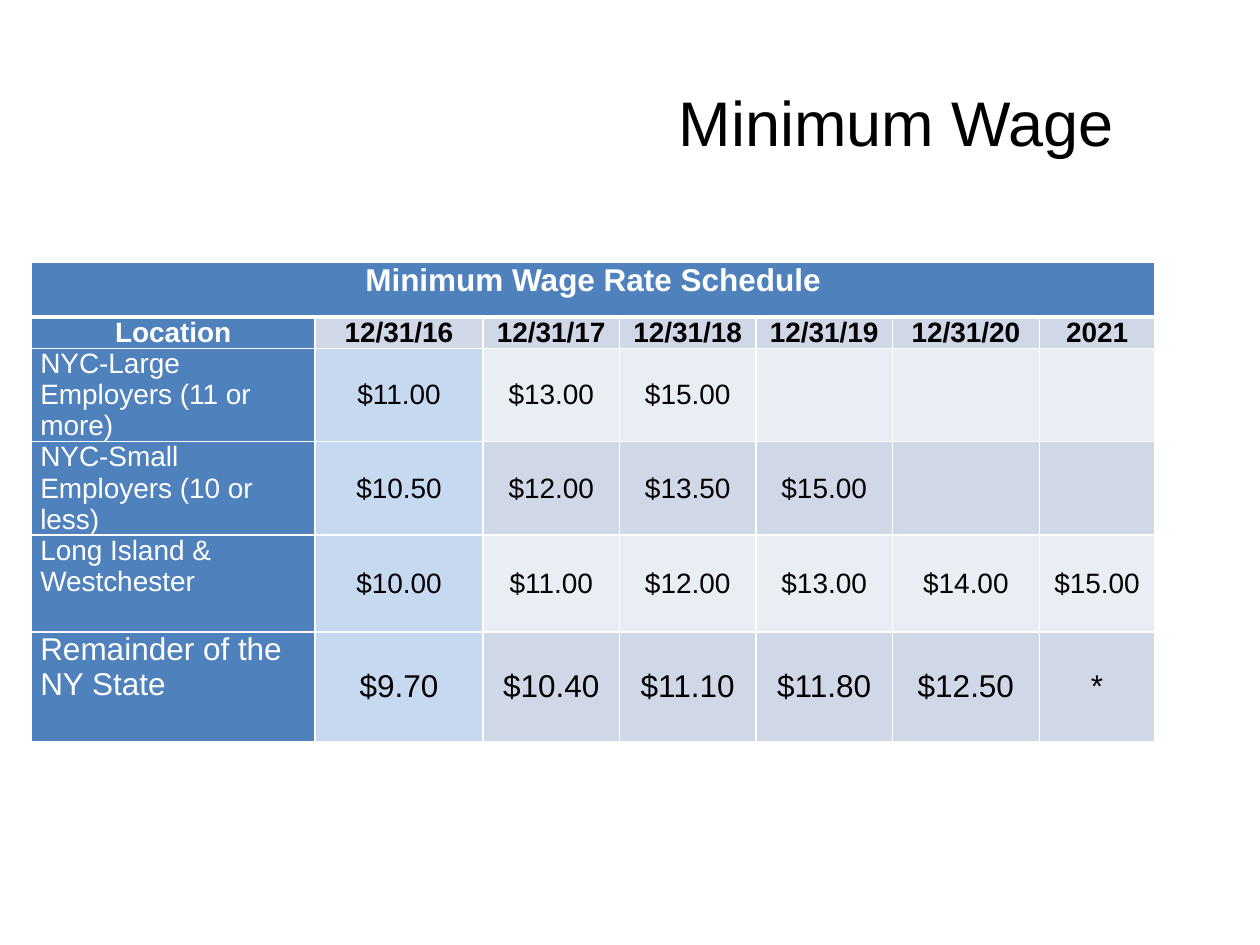
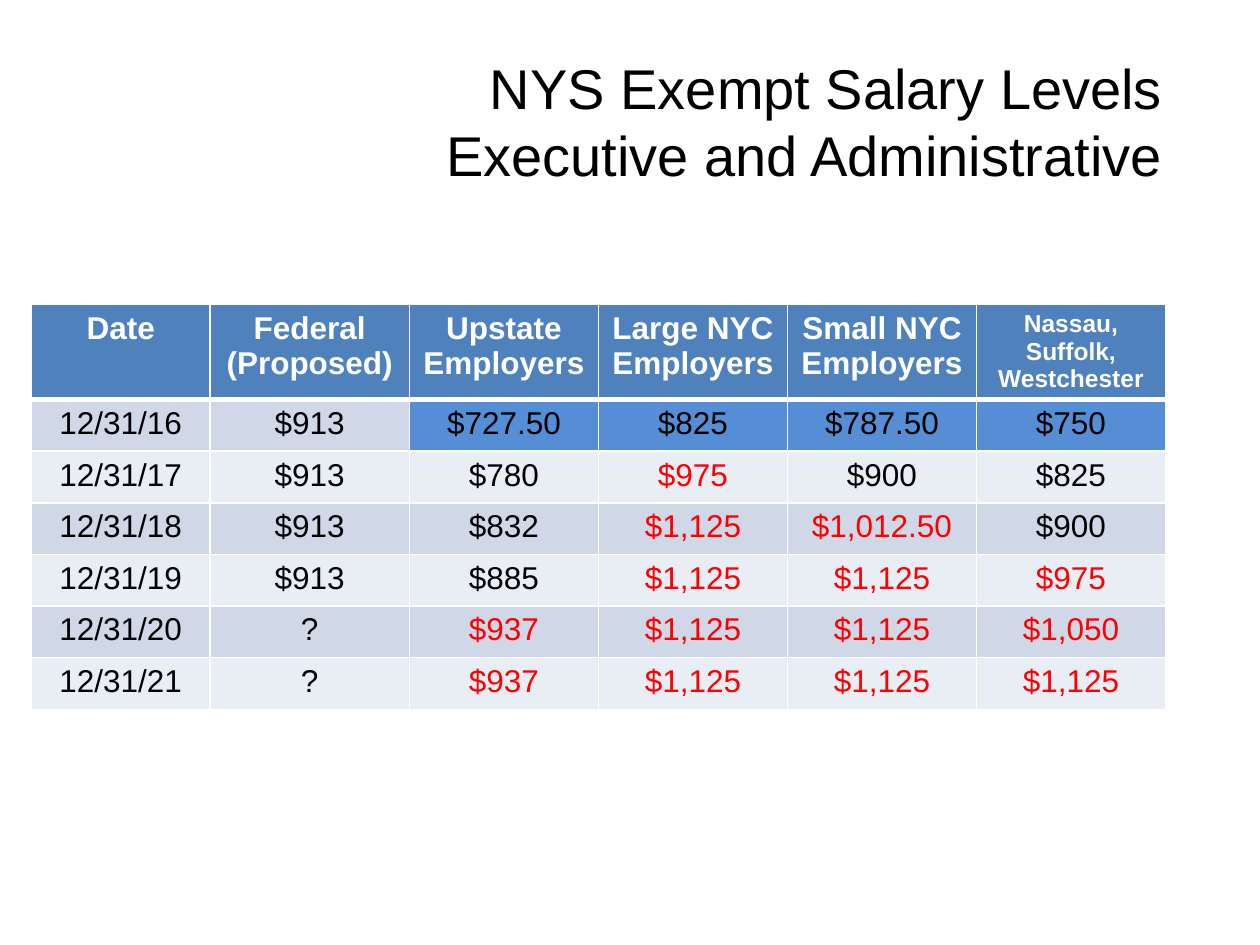
from lxml import etree
from pptx import Presentation
from pptx.dml.color import RGBColor
from pptx.enum.text import MSO_ANCHOR, MSO_AUTO_SIZE, PP_ALIGN
from pptx.oxml.ns import qn
from pptx.util import Inches, Pt

LEFT, CENTER, RIGHT = PP_ALIGN.LEFT, PP_ALIGN.CENTER, PP_ALIGN.RIGHT
TOP, MIDDLE = MSO_ANCHOR.TOP, MSO_ANCHOR.MIDDLE
NO_FIT = MSO_AUTO_SIZE.NONE

BLACK = RGBColor(0x00, 0x00, 0x00)
WHITE = RGBColor(0xFF, 0xFF, 0xFF)
RED = RGBColor(0xFF, 0x00, 0x00)
HEADER_BLUE = RGBColor(0x4F, 0x81, 0xBD)
CURRENT_BLUE = RGBColor(0x55, 0x8E, 0xD5)
FIRST_YEAR_BLUE = RGBColor(0xC6, 0xD9, 0xF1)
BAND_DARK = RGBColor(0xD0, 0xD8, 0xE8)
BAND_LIGHT = RGBColor(0xE9, 0xED, 0xF4)

FONT = "Arial"
SLIDE_WIDTH, SLIDE_HEIGHT = Inches(10), Inches(7.5)
COLUMN_UNIT = SLIDE_WIDTH // 120
TITLE_LAYOUT = 5
FEDERAL_LEVEL = 913

WAGE_COLUMNS = [27, 16, 13, 13, 13, 14, 11]
WAGE_ROWS = [0.43, 0.25, 0.74, 0.74, 0.77, 0.87]
WAGES = [
    ["Minimum Wage Rate Schedule", "", "", "", "", "", ""],
    ["Location", "12/31/16", "12/31/17", "12/31/18", "12/31/19", "12/31/20", "2021"],
    ["NYC-Large Employers (11 or more)", "$11.00", "$13.00", "$15.00", "", "", ""],
    ["NYC-Small Employers (10 or less)", "$10.50", "$12.00", "$13.50", "$15.00", "", ""],
    ["Long Island & Westchester", "$10.00", "$11.00", "$12.00", "$13.00", "$14.00", "$15.00"],
    ["Remainder of the NY State", "$9.70", "$10.40", "$11.10", "$11.80", "$12.50", "*"],
]

SALARY_COLUMNS = [17, 19, 18, 18, 18, 18]
SALARY_ROWS = [0.75] + [0.41] * 6
SALARIES = [
    ["Date", "Federal\n(Proposed)", "Upstate Employers", "Large NYC Employers",
     "Small NYC Employers", "Nassau, Suffolk, Westchester"],
    ["12/31/16", "$913", "$727.50", "$825", "$787.50", "$750"],
    ["12/31/17", "$913", "$780", "$975", "$900", "$825"],
    ["12/31/18", "$913", "$832", "$1,125", "$1,012.50", "$900"],
    ["12/31/19", "$913", "$885", "$1,125", "$1,125", "$975"],
    ["12/31/20", "?", "$937", "$1,125", "$1,125", "$1,050"],
    ["12/31/21", "?", "$937", "$1,125", "$1,125", "$1,125"],
]


def write(frame, text, size=18, color=BLACK, bold=False, align=CENTER):
    """Fill a text frame with evenly formatted paragraphs."""
    frame.text = text
    for para in frame.paragraphs:
        para.alignment = align
        para.font.size = Pt(size)
        for span in para.runs:
            span.font.name, span.font.size = FONT, Pt(size)
            span.font.bold, span.font.color.rgb = bold, color


def add_title(page, text, left, top, size, inset_right=0.1, inset_top=0.05):
    """Place the right-aligned title placeholder at shares of the slide."""
    box = page.shapes.title
    box.left, box.top = int(SLIDE_WIDTH * left), int(SLIDE_HEIGHT * top)
    box.width, box.height = int(SLIDE_WIDTH * 0.9), SLIDE_HEIGHT // 6
    frame = box.text_frame
    frame.auto_size, frame.word_wrap = NO_FIT, True
    frame.vertical_anchor = MIDDLE
    frame.margin_right, frame.margin_top = Inches(inset_right), Inches(inset_top)
    write(frame, text, size=size, align=RIGHT)


def set_borders(cell, row):
    """Draw white cell borders, with a heavy rule below the first row."""
    properties = cell._tc.get_or_add_tcPr()
    widths = {"a:lnL": 1, "a:lnR": 1, "a:lnT": 3 if row == 1 else 1,
              "a:lnB": 3 if row == 0 else 1}
    for tag, width in widths.items():
        line = etree.SubElement(properties, qn(tag), w=str(Pt(width)))
        fill = etree.SubElement(line, qn("a:solidFill"))
        etree.SubElement(fill, qn("a:srgbClr"), val=str(WHITE))


def add_grid(page, top, columns, rows, values, style):
    """Build a table whose cells take fill, anchor and text format from style."""
    shape = page.shapes.add_table(
        len(rows), len(columns), COLUMN_UNIT * 3, int(SLIDE_HEIGHT * top),
        COLUMN_UNIT * sum(columns), Inches(sum(rows)))
    table = shape.table
    for column, units in zip(table.columns, columns):
        column.width = COLUMN_UNIT * units
    for line, height in zip(table.rows, rows):
        line.height = Inches(height)
    for row, texts in enumerate(values):
        for column, text in enumerate(texts):
            cell = table.cell(row, column)
            fill, anchor, text_format = style(row, column, text)
            set_borders(cell, row)
            cell.fill.solid()
            cell.fill.fore_color.rgb = fill
            cell.vertical_anchor = anchor
            write(cell.text_frame, text, **text_format)
    return table


def wage_style(row, column, text):
    """Style a wage cell by heading, location column or year."""
    size = 18 if row in (0, 5) else 16
    if row == 0 or column == 0:
        align = CENTER if row < 2 else LEFT
        return HEADER_BLUE, TOP, dict(size=size, color=WHITE, bold=row < 2, align=align)
    if row == 1:
        return BAND_DARK, TOP, dict(size=size, bold=True)
    band = BAND_DARK if row % 2 else BAND_LIGHT
    return FIRST_YEAR_BLUE if column == 1 else band, MIDDLE, dict(size=size)


def salary_style(row, column, text):
    """Style a salary cell, with red for levels above the federal one."""
    if row == 0:
        return HEADER_BLUE, TOP, dict(size=14 if column == 5 else 18, color=WHITE, bold=True)
    band = BAND_DARK if row % 2 else BAND_LIGHT
    above = column > 1 and float(text.strip("$").replace(",", "")) > FEDERAL_LEVEL
    fill = CURRENT_BLUE if row == 1 and column > 1 else band
    return fill, TOP, dict(color=RED if above else BLACK)


def build_wage_page(page):
    """Build the minimum wage slide."""
    add_title(page, "Minimum Wage", 0.05, 0.04, 36, inset_right=0.66, inset_top=0.12)
    table = add_grid(page, 0.278, WAGE_COLUMNS, WAGE_ROWS, WAGES, wage_style)
    for cell in table.iter_cells():
        cell.margin_left = cell.margin_right = Inches(0.07)
        cell.margin_top = cell.margin_bottom = 0
    table.cell(0, 0).merge(table.cell(0, len(WAGE_COLUMNS) - 1))


def build_salary_page(page):
    """Build the exempt salary slide."""
    add_title(page, "NYS Exempt Salary Levels\vExecutive and Administrative",
              0.033, 0.044, 32)
    add_grid(page, 0.322, SALARY_COLUMNS, SALARY_ROWS, SALARIES, salary_style)


def main():
    """Build and save the deck."""
    deck = Presentation()
    deck.slide_width, deck.slide_height = SLIDE_WIDTH, SLIDE_HEIGHT
    for build in (build_wage_page, build_salary_page):
        build(deck.slides.add_slide(deck.slide_layouts[TITLE_LAYOUT]))
    deck.save("out.pptx")


if __name__ == "__main__":
    main()
